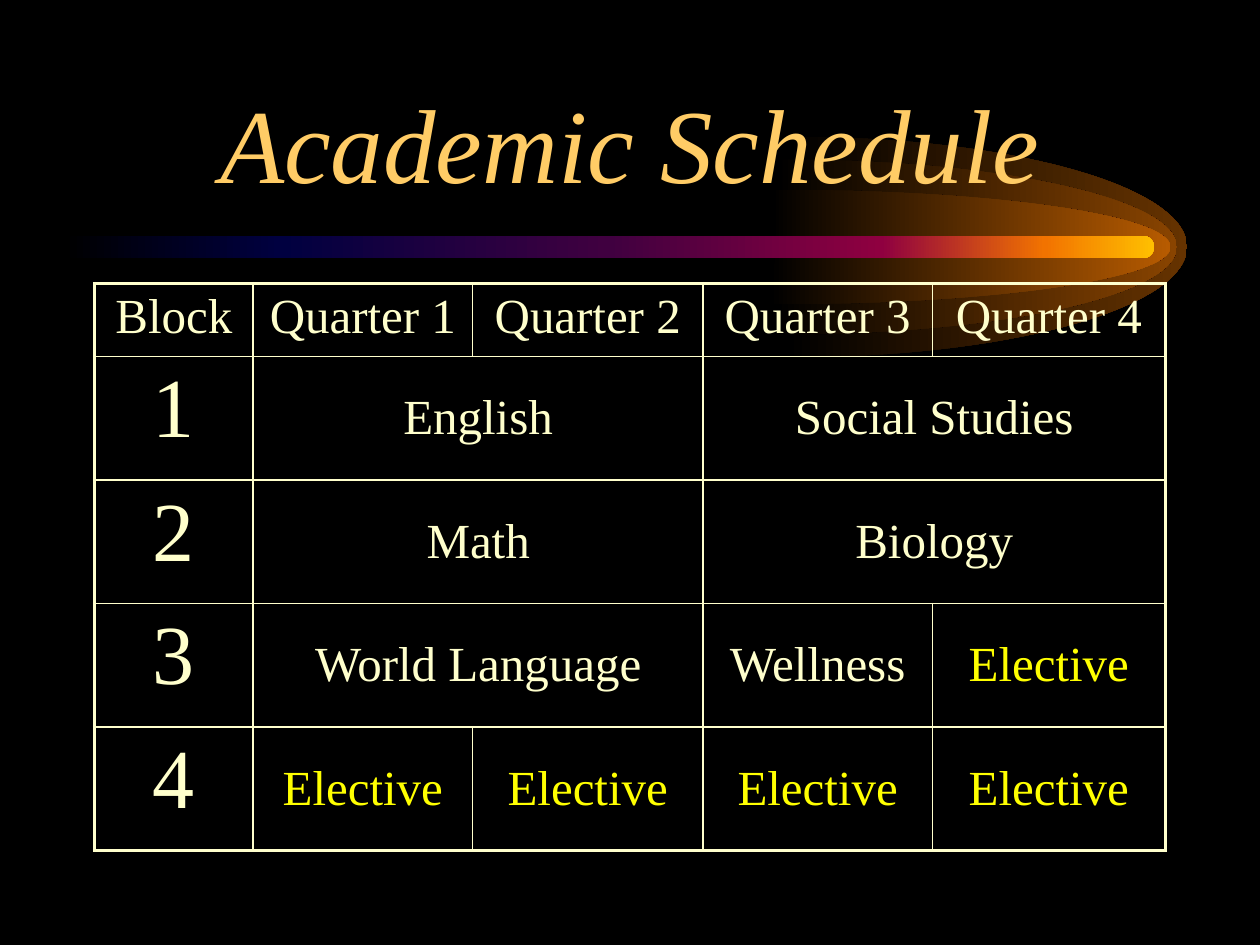
from dataclasses import dataclass

from lxml.etree import SubElement
from pptx import Presentation
from pptx.dml.color import RGBColor
from pptx.enum.shapes import MSO_SHAPE as Shape
from pptx.enum.text import MSO_ANCHOR as Anchor, PP_ALIGN as Align
from pptx.oxml.ns import qn
from pptx.util import Inches, Pt


@dataclass(frozen=True)
class Theme:
    """Colours, font and type sizes of the slide."""
    font: str = "Times New Roman"
    background: str = "000000"
    title: str = "FFCC66"
    text: str = "FFFFCC"
    elective: str = "FFFF00"
    tail: tuple = ("663300", "894400", "B75B00")
    streak: tuple = ((0, "000000"), (20, "000040"), (50, "400040"),
                     (75, "8F0040"), (90, "F27300"), (100, "FFBF00"))
    title_size: int = 60
    block_size: int = 48
    body_size: int = 28
    outer_line: float = 2.25
    inner_line: float = 1


THEME = Theme()
ARC_HANDLE = 0.55
COLUMN_WIDTHS = (1.26, 1.74, 1.83, 1.82, 1.85)
HEADER_HEIGHT, BLOCK_HEIGHT = 0.58, 0.98
SCHEDULE = (
    ("Block", "Quarter 1", "Quarter 2", "Quarter 3", "Quarter 4"),
    ("1", "English", None, "Social Studies", None),
    ("2", "Math", None, "Biology", None),
    ("3", "World Language", None, "Wellness", "Elective"),
    ("4", "Elective", "Elective", "Elective", "Elective"),
)


def style_text(frame, size, color, italic=False):
    """Centre the text and set its font."""
    for paragraph in frame.paragraphs:
        paragraph.alignment = Align.CENTER
        for run in paragraph.runs:
            run.font.name = THEME.font
            run.font.size = Pt(size)
            run.font.italic = italic
            run.font.color.rgb = RGBColor.from_string(color)


def paint_gradient(shape, stops):
    """Fill a shape from left to right with the given stops."""
    shape.shadow.inherit = False
    shape.line.fill.background()
    shape.fill.gradient()
    shape.fill.gradient_angle = 0
    stop_list = shape.element.spPr.find(qn("a:gradFill")).find(qn("a:gsLst"))
    for old_stop in list(stop_list):
        stop_list.remove(old_stop)
    for percent, color in stops:
        stop = SubElement(stop_list, qn("a:gs"), pos=str(percent * 1000))
        SubElement(stop, qn("a:srgbClr"), val=color)


def bend_segment(segment, handles):
    """Turn a straight outline segment into a curve with two handles."""
    end = segment[0]
    segment.tag = qn("a:cubicBezTo")
    for x, y in handles:
        handle = SubElement(segment, qn("a:pt"), x=str(Inches(x)), y=str(Inches(y)))
        end.addprevious(handle)


def add_tail(slide, left, top, width, height, color):
    """Draw the right half of an ellipse, fading in from the background."""
    inset, middle = 0.05, height / 2
    outline = [(inset, 0), (width, middle), (inset, height),
               (0, height), (inset, middle)]
    corners = [(Inches(left + x), Inches(top + y)) for x, y in outline]
    builder = slide.shapes.build_freeform(*corners[0])
    builder.add_line_segments(corners[1:], close=True)
    tail = builder.convert_to_shape()
    upper, lower = list(tail.element.iter(qn("a:lnTo")))[:2]
    shoulder = inset + (width - inset) * ARC_HANDLE
    rise = middle * ARC_HANDLE
    bend_segment(upper, ((shoulder, 0), (width, middle - rise)))
    bend_segment(lower, ((width, middle + rise), (shoulder, height)))
    paint_gradient(tail, ((0, THEME.background), (100, color)))


def add_comet(slide, left, top, width, height):
    """Draw the glowing comet: three nested tails and a streak."""
    tails = ((6.24, 1.75), (6.16, 1.39), (6.11, 0.91))
    middle = top + height / 2
    for (tail_left, tail_height), color in zip(tails, THEME.tail):
        add_tail(slide, tail_left, middle - tail_height / 2,
                 3.18, tail_height, color)
    streak = slide.shapes.add_shape(
        Shape.ROUNDED_RECTANGLE, Inches(left), Inches(top),
        Inches(width), Inches(height))
    streak.adjustments[0] = 0.5
    paint_gradient(streak, THEME.streak)


def place_title(slide, text, left, top, width, height):
    """Set the title in front of the comet."""
    title = slide.shapes.title
    title.left, title.top = Inches(left), Inches(top)
    title.width, title.height = Inches(width), Inches(height)
    title.element.getparent().append(title.element)
    title.text_frame.text = text
    title.text_frame.vertical_anchor = Anchor.BOTTOM
    style_text(title.text_frame, THEME.title_size, THEME.title, italic=True)


def draw_borders(cell, outer_sides):
    """Rule the cell, heavier along the outside of the table."""
    properties = cell._tc.get_or_add_tcPr()
    for side, is_outer in outer_sides.items():
        weight = THEME.outer_line if is_outer else THEME.inner_line
        line = SubElement(properties, qn(f"a:ln{side}"), w=str(Pt(weight)))
        fill = SubElement(line, qn("a:solidFill"))
        SubElement(fill, qn("a:srgbClr"), val=THEME.text)


def fill_cell(cell, text, is_header, is_block):
    """Write one schedule entry."""
    cell.text_frame.text = text
    if not (is_header or is_block):
        cell.vertical_anchor = Anchor.MIDDLE
    size = THEME.block_size if is_block and not is_header else THEME.body_size
    color = THEME.elective if text == "Elective" else THEME.text
    style_text(cell.text_frame, size, color)


def add_schedule(slide, left, top, width, height):
    """Build the table, merging courses that last two quarters."""
    last_row, last_column = len(SCHEDULE) - 1, len(COLUMN_WIDTHS) - 1
    table = slide.shapes.add_table(
        last_row + 1, last_column + 1, Inches(left), Inches(top),
        Inches(width), Inches(height)).table
    table.first_row = table.horz_banding = False
    for column, column_width in zip(table.columns, COLUMN_WIDTHS):
        column.width = Inches(column_width)
    for r, entries in enumerate(SCHEDULE):
        table.rows[r].height = Inches(BLOCK_HEIGHT if r else HEADER_HEIGHT)
        for c, entry in enumerate(entries):
            cell = table.cell(r, c)
            end = c
            if c < last_column and entries[c + 1] is None:
                end = c + 1
                cell.merge(table.cell(r, end))
            sides = {"L": c == 0, "R": end == last_column,
                     "T": r == 0, "B": r == last_row}
            if entry is None:
                del sides["L"]
            else:
                fill_cell(cell, entry, r == 0, c == 0)
            draw_borders(cell, sides)
            cell.fill.background()


def main():
    """Build and save the slide."""
    deck = Presentation()
    deck.slide_width, deck.slide_height = Inches(10), Inches(7.5)
    slide = deck.slides.add_slide(deck.slide_layouts[5])
    slide.background.fill.solid()
    slide.background.fill.fore_color.rgb = RGBColor.from_string(THEME.background)
    add_comet(slide, 0.5, 1.87, 8.66, 0.18)
    place_title(slide, "Academic Schedule", 0.75, 0.42, 8.5, 1.25)
    add_schedule(slide, 0.75, 2.25, 8.5, 4.5)
    deck.save("out.pptx")


if __name__ == "__main__":
    main()
